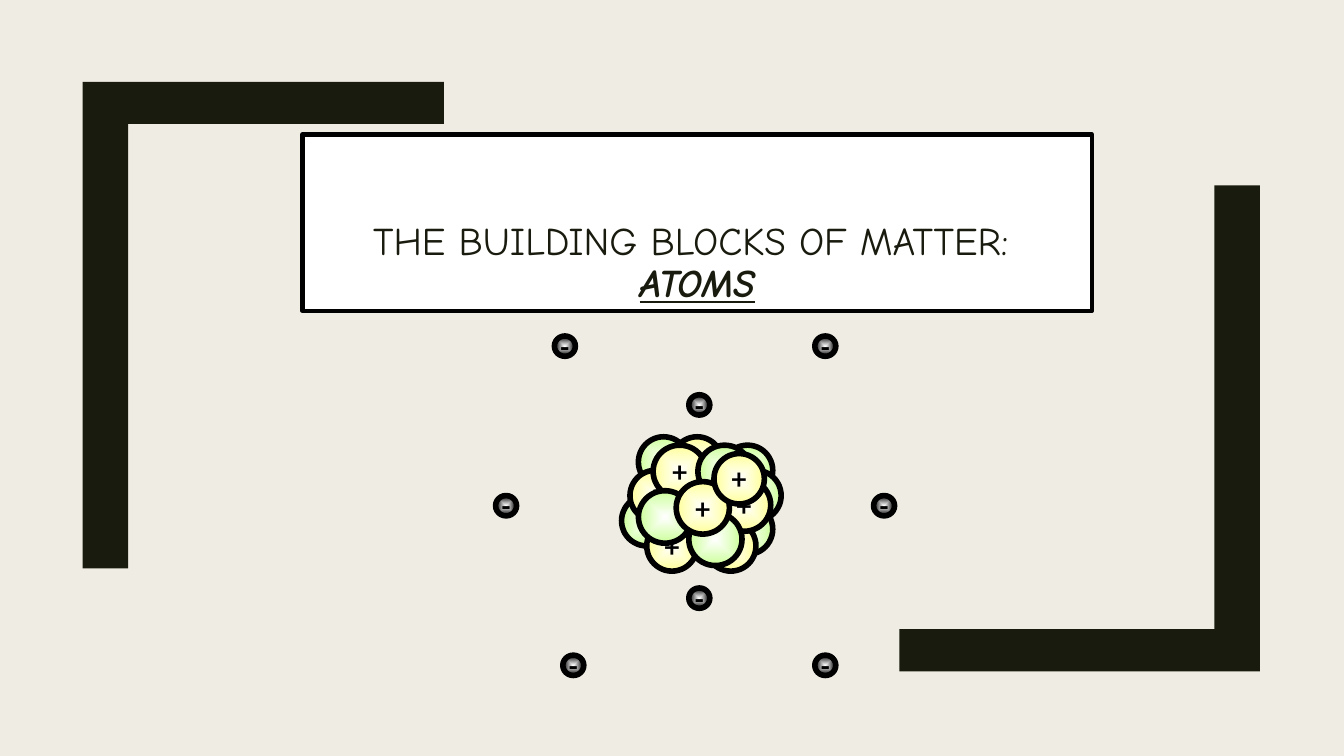
from lxml import etree
from pptx import Presentation
from pptx.dml.color import RGBColor
from pptx.enum.shapes import MSO_SHAPE
from pptx.enum.text import MSO_ANCHOR, MSO_AUTO_SIZE, PP_ALIGN
from pptx.oxml import parse_xml
from pptx.oxml.ns import nsdecls, qn
from pptx.util import Pt

INK, BLACK, WHITE = "191B0E", "000000", "FFFFFF"
GREEN, YELLOW = "CCFF99", "FFFF99"

# Corner brackets, as outline points
BRACKETS = [
    [(867.5, 132.5), (900, 132.5), (900, 479.5), (642.5, 479.5),
     (642.5, 449.5), (867.5, 449.5)],
    [(91.5, 406), (59, 406), (59, 58.5), (317, 58.5), (317, 88.5),
     (91.5, 88.5)],
]

# Particles: sizes, then left and top from back to front
NUCLEON, FRONT_NUCLEON, ELECTRON = (36, 36), (38, 37.5), (15, 14.5)
BACK_NEUTRONS = [(516, 318), (444, 354), (522, 336), (516, 360), (456, 312)]
BACK_PROTONS = [(504, 372), (480, 312), (450, 336), (462, 372)]
FRONT_NUCLEONS = [
    (466.5, 318, YELLOW), (498.5, 318, GREEN), (512.5, 342, YELLOW),
    (456, 350.5, GREEN), (492, 366.5, GREEN), (483, 344, YELLOW),
]
ELECTRONS = [(492, 282), (492, 420), (582, 240), (624, 354),
             (582, 468), (402, 468), (396, 240), (354, 354)]
TOP_PROTON = (510, 324)


def color(value):
    return RGBColor.from_string(value)


def set_line(sp, width):
    sp.line.color.rgb = color(BLACK)
    sp.line.width = Pt(width)


def fill_radial(sp, rim):
    """Fill from a white centre to the rim colour."""
    sp.fill.gradient()
    for stop, value in zip(sp.fill.gradient_stops, (WHITE, rim)):
        stop.color.rgb = color(value)
    sp.fill.gradient_stops[0].position = 0
    sp.fill.gradient_stops[1].position = 1
    grad = sp._element.spPr.find(qn("a:gradFill"))
    grad.replace(grad.find(qn("a:lin")), parse_xml(
        f'<a:path {nsdecls("a")} path="shape"><a:fillToRect l="50000" '
        't="50000" r="50000" b="50000"/></a:path>'))


def add_particle(shapes, left, top, size, rim, sign=""):
    sp = shapes.add_shape(MSO_SHAPE.OVAL, Pt(left), Pt(top), *map(Pt, size))
    sp.shadow.inherit = False
    fill_radial(sp, rim)
    set_line(sp, 4)
    if sign:
        tf = sp.text_frame
        tf.word_wrap = False
        tf.vertical_anchor = MSO_ANCHOR.MIDDLE
        p = tf.paragraphs[0]
        p.text = sign
        p.alignment = PP_ALIGN.CENTER
        p.font.name, p.font.size, p.font.bold = "Lato", Pt(20), True
        p.font.color.rgb = color(BLACK)


def add_nucleon(shapes, left, top, size, rim):
    add_particle(shapes, left, top, size, rim, "+" if rim == YELLOW else "")


def add_bracket(s, points):
    corners = [(Pt(x), Pt(y)) for x, y in points]
    builder = s.shapes.build_freeform(*corners[0])
    builder.add_line_segments(corners[1:], close=True)
    sp = builder.convert_to_shape()
    sp.shadow.inherit = False
    sp.fill.solid()
    sp.fill.fore_color.rgb = color(INK)
    sp.line.fill.background()


def add_title(s):
    sp = s.shapes.title
    sp.left, sp.top, sp.width, sp.height = map(Pt, (216, 96, 564, 126))
    sp.fill.solid()
    sp.fill.fore_color.rgb = color(WHITE)
    set_line(sp, 3)
    tf = sp.text_frame
    tf.word_wrap = True
    tf.auto_size = MSO_AUTO_SIZE.NONE
    tf.vertical_anchor = MSO_ANCHOR.BOTTOM
    p = tf.paragraphs[0]
    p.alignment = PP_ALIGN.CENTER
    p.line_spacing = 0.89
    p.font.name, p.font.size = "Comic Neue", Pt(28)
    p.font.color.rgb = color(INK)
    p.add_run().text = "THE BUILDING BLOCKS OF MATTER: "
    p.add_line_break()
    r = p.add_run()
    r.text = "ATOMS"
    r.font.bold = r.font.italic = r.font.underline = True


def main():
    prs = Presentation()
    prs.slide_width, prs.slide_height = Pt(960), Pt(540)
    s = prs.slides.add_slide(prs.slide_layouts[0])
    s.background.fill.solid()
    s.background.fill.fore_color.rgb = color("EFEDE3")
    subtitle = s.placeholders[1]._element
    subtitle.getparent().remove(subtitle)

    # Frame and title
    for points in BRACKETS:
        add_bracket(s, points)
    add_title(s)

    # Nucleus
    for rim, places in ((GREEN, BACK_NEUTRONS), (YELLOW, BACK_PROTONS)):
        for left, top in places:
            add_nucleon(s.shapes, left, top, NUCLEON, rim)
    front = s.shapes.add_group_shape()
    for left, top, rim in FRONT_NUCLEONS:
        add_nucleon(front.shapes, left, top, FRONT_NUCLEON, rim)

    # Electrons, then the frontmost proton
    for left, top in ELECTRONS:
        add_particle(s.shapes, left, top, ELECTRON, BLACK, "-")
    add_nucleon(s.shapes, *TOP_PROTON, NUCLEON, YELLOW)

    prs.save("out.pptx")


if __name__ == "__main__":
    main()
